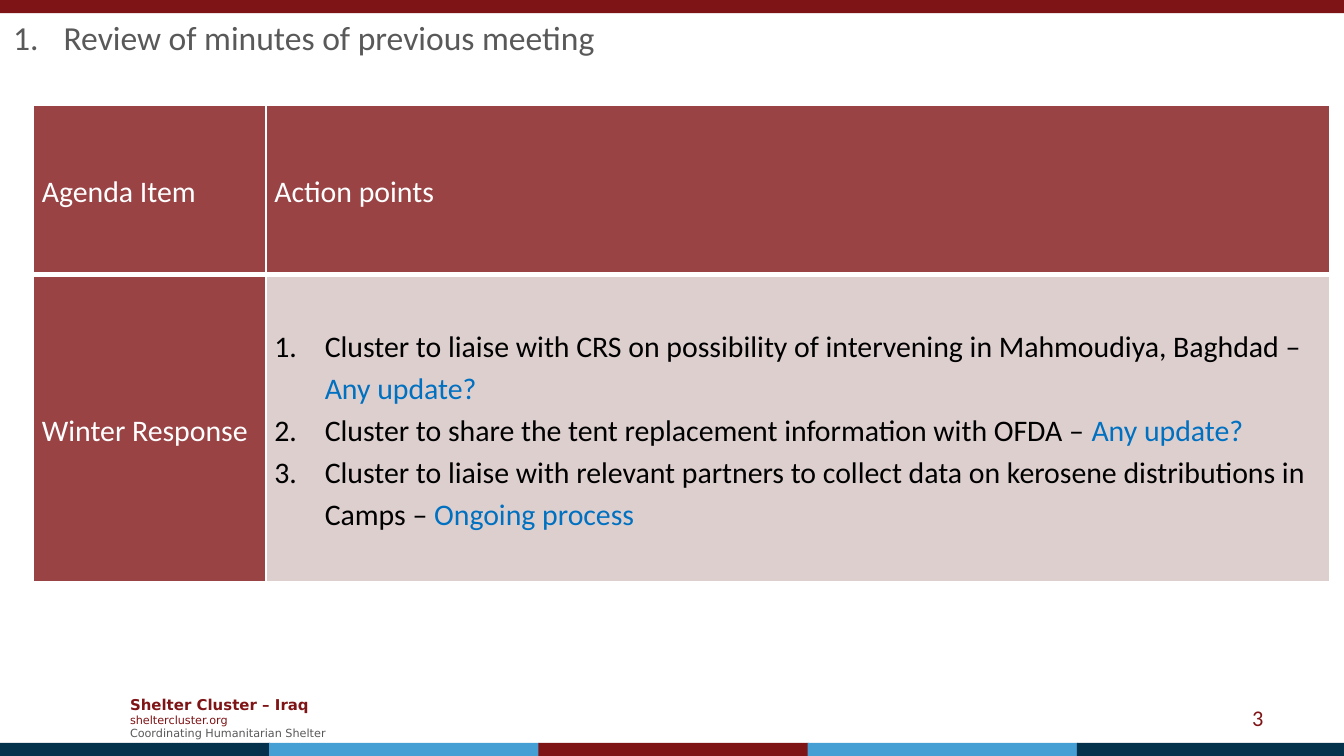
from dataclasses import dataclass

from lxml import etree
from pptx import Presentation
from pptx.dml.color import RGBColor
from pptx.enum.shapes import MSO_SHAPE
from pptx.enum.text import MSO_ANCHOR, PP_ALIGN
from pptx.oxml.ns import qn
from pptx.util import Pt

RECTANGLE = MSO_SHAPE.RECTANGLE
MIDDLE = MSO_ANCHOR.MIDDLE
LEFT = PP_ALIGN.LEFT
RIGHT = PP_ALIGN.RIGHT

WIDTH, HEIGHT = 720, 405
BAND_HEIGHT = 7
STRIPE_STEP = 144.25


@dataclass(frozen=True)
class Theme:
    body_font: str = "Calibri"
    footer_font: str = "DejaVu Sans"
    maroon: str = "7F1416"
    navy: str = "04314C"
    sky: str = "459FD5"
    gray: str = "595959"
    white: str = "FFFFFF"
    black: str = "000000"
    status: str = "0070C0"
    header_fill: str = "994345"
    body_fill: str = "DECFCF"
    title_size: float = 18
    table_size: float = 16
    number_size: float = 12
    footer_size: float = 8
    footer_small_size: float = 6
    list_indent: float = 27


class SlideBuilder:
    def __init__(self, slide, theme):
        self.slide = slide
        self.theme = theme

    def band(self, left, top, width, color):
        shape = self.slide.shapes.add_shape(
            RECTANGLE, Pt(left), Pt(top), Pt(width), Pt(BAND_HEIGHT))
        shape.shadow.inherit = False
        shape.fill.solid()
        shape.fill.fore_color.rgb = RGBColor.from_string(color)
        shape.line.fill.background()

    def text_box(self, left, top, width, height):
        """Add a wrapping, vertically centred box and return its text frame."""
        box = self.slide.shapes.add_textbox(Pt(left), Pt(top), Pt(width), Pt(height))
        frame = box.text_frame
        frame.word_wrap = True
        frame.vertical_anchor = MIDDLE
        return frame

    def paragraph(self, frame, runs, size, font=None, bold=False,
                  align=LEFT, spacing=None, numbered=False):
        """Fill the empty first paragraph or add one; runs are (text, color)."""
        paragraph = frame.paragraphs[0]
        if paragraph.runs:
            paragraph = frame.add_paragraph()
        paragraph.alignment = align
        if spacing:
            paragraph.line_spacing = spacing
        if numbered:
            self.number(paragraph)
        paragraph.font.name = font or self.theme.body_font
        paragraph.font.size = Pt(size)
        paragraph.font.bold = bold
        colors = {color for _, color in runs}
        if len(colors) == 1:
            paragraph.font.color.rgb = RGBColor.from_string(colors.pop())
        for text, color in runs:
            run = paragraph.add_run()
            run.text = text
            if colors:
                run.font.color.rgb = RGBColor.from_string(color)

    def number(self, paragraph):
        properties = paragraph._p.get_or_add_pPr()
        indent = Pt(self.theme.list_indent)
        properties.set("marL", str(indent))
        properties.set("indent", str(-indent))
        etree.SubElement(properties, qn("a:buAutoNum"), type="arabicPeriod")

    def table(self, left, top, column_widths, row_heights):
        shape = self.slide.shapes.add_table(
            len(row_heights), len(column_widths), Pt(left), Pt(top),
            Pt(sum(column_widths)), Pt(sum(row_heights)))
        table = shape.table
        table.first_row = table.horz_banding = False
        for column, width in zip(table.columns, column_widths):
            column.width = Pt(width)
        for row, height in zip(table.rows, row_heights):
            row.height = Pt(height)
        return table

    def cell(self, cell, paragraphs, fill, top_border=1, bottom_border=1, numbered=False):
        borders = {"L": 1, "R": 1, "T": top_border, "B": bottom_border}
        properties = cell._tc.get_or_add_tcPr()
        for side, width in borders.items():
            line = etree.SubElement(properties, qn(f"a:ln{side}"), w=str(Pt(width)))
            solid = etree.SubElement(line, qn("a:solidFill"))
            etree.SubElement(solid, qn("a:srgbClr"), val=self.theme.white)
        cell.fill.solid()
        cell.fill.fore_color.rgb = RGBColor.from_string(fill)
        cell.margin_left = cell.margin_right = Pt(4.5)
        cell.margin_top = cell.margin_bottom = 0
        cell.vertical_anchor = MIDDLE
        for runs in paragraphs:
            self.paragraph(cell.text_frame, runs, self.theme.table_size,
                           spacing=1.15, numbered=numbered)


def main():
    presentation = Presentation()
    presentation.slide_width = Pt(WIDTH)
    presentation.slide_height = Pt(HEIGHT)
    theme = Theme()
    builder = SlideBuilder(
        presentation.slides.add_slide(presentation.slide_layouts[6]), theme)

    footer = builder.text_box(62.6, 368.6, 124.6, 31.7)
    footer_lines = [
        ("Shelter Cluster – Iraq", theme.maroon, theme.footer_size, True),
        ("sheltercluster.org", theme.maroon, theme.footer_small_size, False),
        ("Coordinating Humanitarian Shelter", theme.gray, theme.footer_small_size, False),
    ]
    for text, color, size, bold in footer_lines:
        builder.paragraph(footer, [(text, color)], size, theme.footer_font, bold)

    builder.band(0, 0, WIDTH, theme.maroon)
    stripes = [theme.navy, theme.sky, theme.maroon, theme.sky, theme.navy]
    for index, color in enumerate(stripes):
        builder.band(index * STRIPE_STEP, HEIGHT - BAND_HEIGHT, STRIPE_STEP + 0.5, color)

    page_number = builder.text_box(516.2, 373.7, 167.8, 21.6)
    builder.paragraph(page_number, [("3", theme.maroon)], theme.number_size, align=RIGHT)

    title = builder.text_box(0, 6.5, WIDTH, 26.6)
    builder.paragraph(title, [("Review of minutes of previous meeting", theme.gray)],
                      theme.title_size, numbered=True)

    table = builder.table(18, 56.5, [124.5, 570], [90.5, 165])
    for column, heading in enumerate(["Agenda Item", "Action points"]):
        builder.cell(table.cell(0, column), [[(heading, theme.white)]],
                     theme.header_fill, bottom_border=3)
    builder.cell(table.cell(1, 0), [[("Winter Response", theme.white)]],
                 theme.header_fill, top_border=3)

    actions = [
        ("Cluster to liaise with CRS on possibility of intervening in Mahmoudiya, Baghdad – ",
         "Any update?"),
        ("Cluster to share the tent replacement information with OFDA – ", "Any update?"),
        ("Cluster to liaise with relevant partners to collect data on kerosene "
         "distributions in Camps – ", "Ongoing process"),
    ]
    action_runs = [[(action, theme.black), (status, theme.status)]
                   for action, status in actions]
    builder.cell(table.cell(1, 1), action_runs, theme.body_fill,
                 top_border=3, numbered=True)

    presentation.save("out.pptx")


if __name__ == "__main__":
    main()
